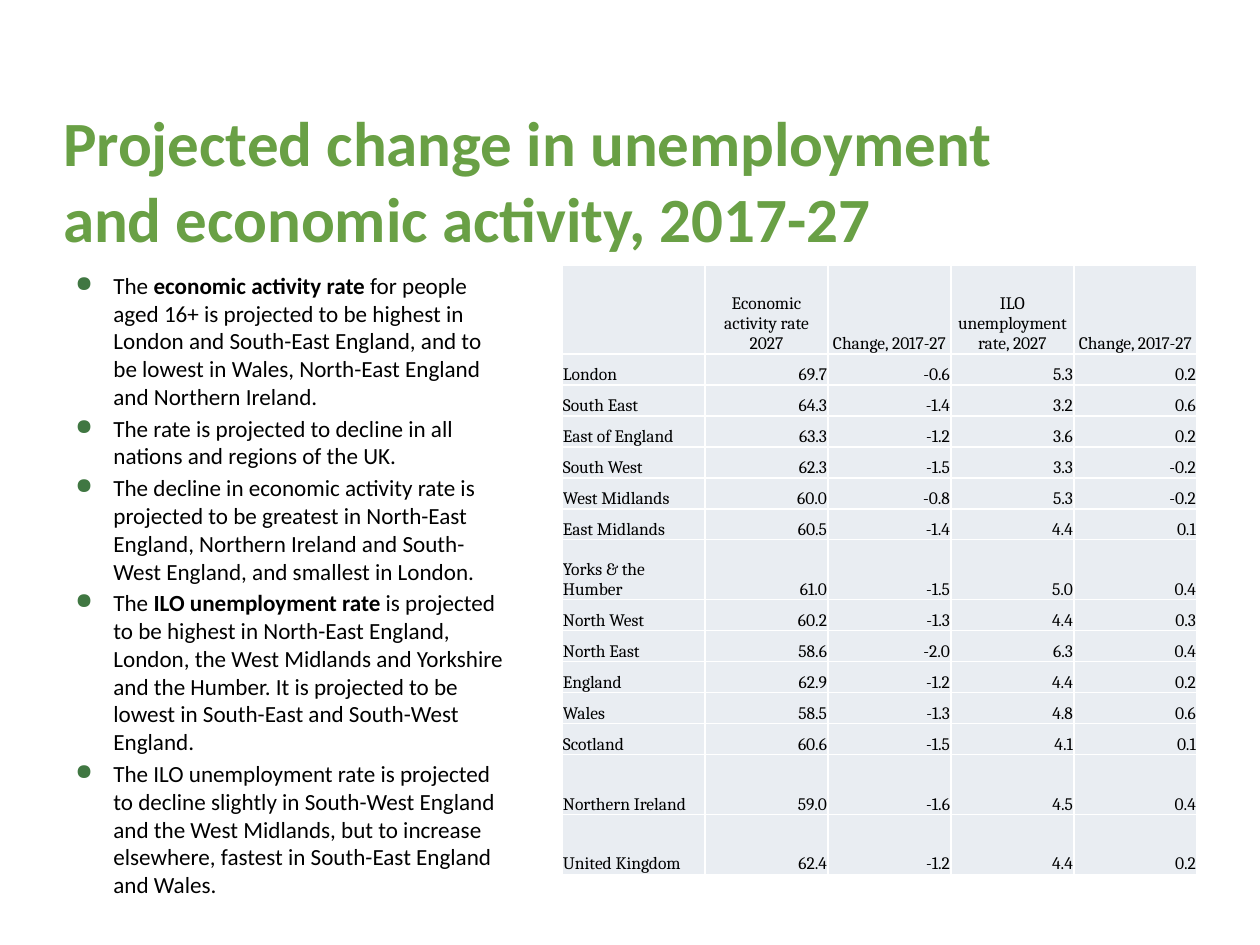
"""Build the slide on projected regional unemployment and economic activity."""
from dataclasses import dataclass

from lxml import etree
from pptx import Presentation
from pptx import util as u
from pptx.dml.color import RGBColor
from pptx.enum import text
from pptx.oxml.ns import qn

PX_PER_INCH = 126
GREEN = RGBColor(0x69, 0xA0, 0x45)
BULLET_GREEN = RGBColor(0x40, 0x77, 0x42)
BLACK = RGBColor(0, 0, 0)
WHITE = RGBColor(0xFF, 0xFF, 0xFF)
CELL_BLUE = RGBColor(0xE9, 0xED, 0xF2)

LABEL_WIDTH, VALUE_WIDTH = 143, 123
HEADER_HEIGHT, ROW_HEIGHT, TALL_HEIGHT = 89, 31, 60
BULLET_INDENT = 38


@dataclass
class Frame:
    left: int
    top: int
    width: int
    height: int

    def emu(self) -> tuple:
        return tuple(px(side) for side in (self.left, self.top, self.width, self.height))


@dataclass
class Region:
    name: str
    values: tuple
    height: int = ROW_HEIGHT


@dataclass
class Point:
    lead: str
    bold: str = ""
    rest: str = ""


TITLE_FRAME = Frame(63, 97, 1134, 158)
POINTS_FRAME = Frame(63, 265, 459, 611)
TABLE_FRAME = Frame(562, 265, 635, 611)

TITLE = "Projected change in unemployment \vand economic activity, 2017-27"
POINTS = [
    Point("The ", "economic activity rate ",
          "for people aged 16+ is projected to be highest in London and South-East England, "
          "and to be lowest in Wales, North-East England and Northern Ireland."),
    Point("The rate is projected to decline in all nations and regions of the UK."),
    Point("The decline in economic activity rate is projected to be greatest in North-East "
          "England, Northern Ireland and South-West England, and smallest in London."),
    Point("The ", "ILO unemployment rate ",
          "is projected to be highest in North-East England, London, the West Midlands and "
          "Yorkshire and the Humber. It is projected to be lowest in South-East and "
          "South-West England."),
    Point("The ILO unemployment rate is projected to decline slightly in South-West England "
          "and the West Midlands, but to increase elsewhere, fastest in South-East England "
          "and Wales."),
]
HEADINGS = ("", "Economic activity rate 2027", "Change, 2017-27",
            "ILO unemployment rate, 2027", "Change, 2017-27")
REGIONS = [
    Region("London", (69.7, -0.6, 5.3, 0.2)),
    Region("South East", (64.3, -1.4, 3.2, 0.6)),
    Region("East of England", (63.3, -1.2, 3.6, 0.2)),
    Region("South West", (62.3, -1.5, 3.3, -0.2)),
    Region("West Midlands", (60.0, -0.8, 5.3, -0.2)),
    Region("East Midlands", (60.5, -1.4, 4.4, 0.1)),
    Region("Yorks & the Humber", (61.0, -1.5, 5.0, 0.4), TALL_HEIGHT),
    Region("North West", (60.2, -1.3, 4.4, 0.3)),
    Region("North East", (58.6, -2.0, 6.3, 0.4)),
    Region("England", (62.9, -1.2, 4.4, 0.2)),
    Region("Wales", (58.5, -1.3, 4.8, 0.6)),
    Region("Scotland", (60.6, -1.5, 4.1, 0.1)),
    Region("Northern Ireland", (59.0, -1.6, 4.5, 0.4), TALL_HEIGHT),
    Region("United Kingdom", (62.4, -1.2, 4.4, 0.2), TALL_HEIGHT),
]


def px(length: int) -> int:
    return u.Inches(length / PX_PER_INCH)


def style_span(span, font: str, size: float, color: RGBColor, bold: bool = False) -> None:
    span.font.name = font
    span.font.size = u.Pt(size)
    span.font.bold = bold
    span.font.color.rgb = color


def add_bullet(para) -> None:
    properties = para._p.get_or_add_pPr()
    properties.set("marL", str(px(BULLET_INDENT)))
    properties.set("indent", str(-px(BULLET_INDENT)))
    color = etree.SubElement(properties, qn("a:buClr"))
    etree.SubElement(color, qn("a:srgbClr"), val=str(BULLET_GREEN))
    etree.SubElement(properties, qn("a:buSzPct"), val="95000")
    etree.SubElement(properties, qn("a:buChar"), char="●")


def add_borders(cell) -> None:
    properties = cell._tc.get_or_add_tcPr()
    for side in ("a:lnL", "a:lnR", "a:lnT", "a:lnB"):
        line = etree.SubElement(properties, qn(side), w=str(u.Pt(1)))
        fill = etree.SubElement(line, qn("a:solidFill"))
        etree.SubElement(fill, qn("a:srgbClr"), val=str(WHITE))


def draw_title(page) -> None:
    box = page.shapes.title
    box.left, box.top, box.width, box.height = TITLE_FRAME.emu()
    frame = box.text_frame
    frame.text = TITLE
    frame.word_wrap = True
    frame.auto_size = text.MSO_AUTO_SIZE.NONE
    frame.vertical_anchor = text.MSO_ANCHOR.BOTTOM
    frame.margin_left = frame.margin_right = frame.margin_bottom = 0
    frame.margin_top = u.Inches(0.05)
    para = frame.paragraphs[0]
    para.alignment = text.PP_ALIGN.LEFT
    for span in para.runs:
        style_span(span, "Calibri", 36, GREEN, True)


def draw_points(page, points: list[Point]) -> None:
    frame = page.shapes.add_textbox(*POINTS_FRAME.emu()).text_frame
    frame.word_wrap = True
    for index, point in enumerate(points):
        para = frame.add_paragraph() if index else frame.paragraphs[0]
        add_bullet(para)
        if index:
            para.space_before = u.Pt(2.4)
        for wording in filter(None, (point.lead, point.bold, point.rest)):
            span = para.add_run()
            span.text = wording
            style_span(span, "Calibri", 13.2, BLACK, wording == point.bold)


def fill_cell(cell, wording: str, alignment: text.PP_ALIGN) -> None:
    add_borders(cell)
    cell.fill.solid()
    cell.fill.fore_color.rgb = CELL_BLUE
    cell.vertical_anchor = text.MSO_ANCHOR.BOTTOM
    cell.margin_left = cell.margin_right = cell.margin_top = px(1)
    cell.margin_bottom = 0
    cell.text_frame.text = wording
    para = cell.text_frame.paragraphs[0]
    para.alignment = alignment
    for span in para.runs:
        style_span(span, "Cambria", 10, BLACK)


def draw_table(page, regions: list[Region]) -> None:
    table = page.shapes.add_table(len(regions) + 1, len(HEADINGS), *TABLE_FRAME.emu()).table
    table.first_row = table.horz_banding = False
    for index, column in enumerate(table.columns):
        column.width = px(VALUE_WIDTH if index else LABEL_WIDTH)
    table.rows[0].height = px(HEADER_HEIGHT)
    for index, heading in enumerate(HEADINGS):
        fill_cell(table.cell(0, index), heading, text.PP_ALIGN.CENTER)
    for row, region in enumerate(regions, start=1):
        table.rows[row].height = px(region.height)
        fill_cell(table.cell(row, 0), region.name, text.PP_ALIGN.LEFT)
        for column, value in enumerate(region.values, start=1):
            fill_cell(table.cell(row, column), f"{value:.1f}", text.PP_ALIGN.RIGHT)


def main() -> None:
    deck = Presentation()
    deck.slide_width, deck.slide_height = px(1260), px(945)
    page = deck.slides.add_slide(deck.slide_layouts[5])
    draw_title(page)
    draw_points(page, POINTS)
    draw_table(page, REGIONS)
    deck.save("out.pptx")


if __name__ == "__main__":
    main()
